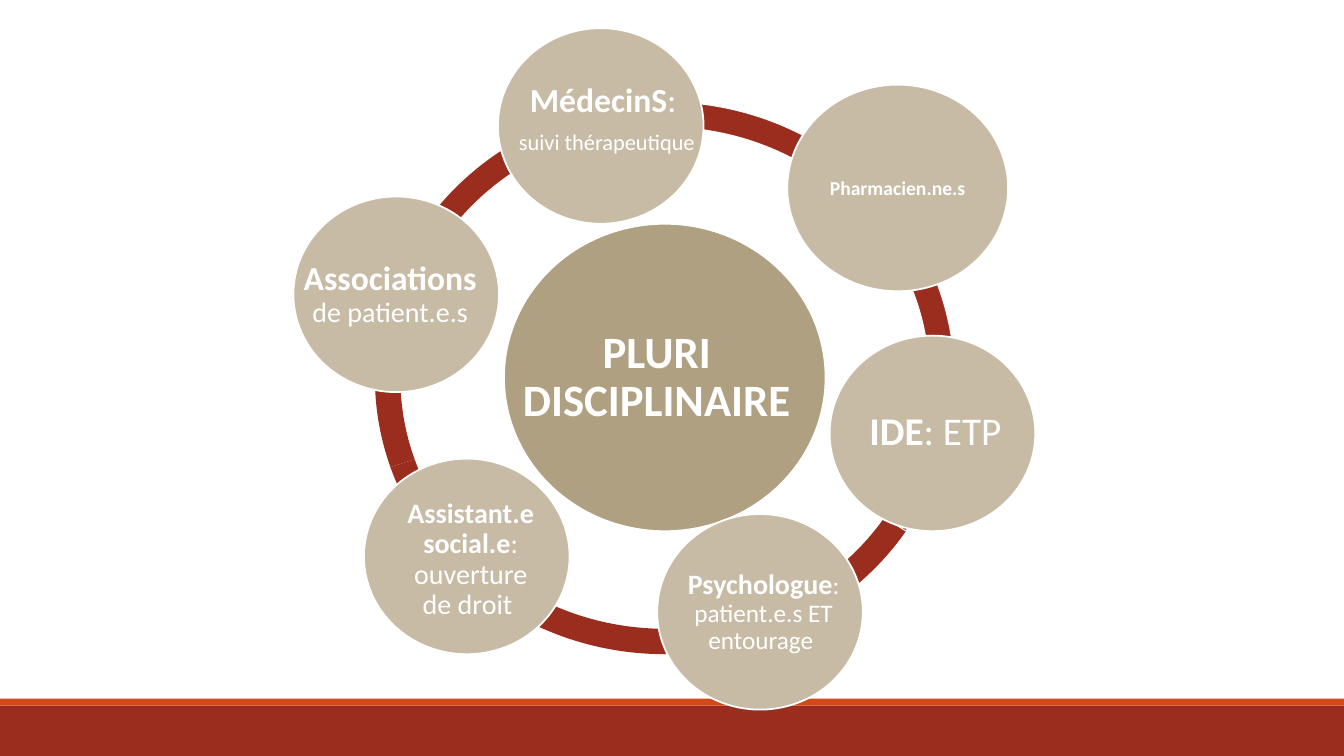
from lxml import etree
from pptx import Presentation, util as u
from pptx.dml.color import RGBColor
from pptx.enum import shapes, text

WIDTH, HEIGHT = u.Inches(13.333), u.Inches(7.5)
FONT, WHITE = "Calibri", "FFFFFF"
BRICK, ORANGE, TAN, SAND = "9B2D1F", "D34817", "B0A082", "C7BBA6"

# Boxes are (left, top, width, height) in percent of the slide
RING = (27.9, 13.47, 43.13, 73.07)
HUB = (37.5, 29.6, 23.93, 40.67)
HUB_LABEL = (37.5, 35.6, 22.73, 28.8)
PHARMACIST = (58.58, 11.2, 16.43, 27.33)
ROLE_SIZE = (15.3, 25.87)
LABEL_HEIGHT = 18.27

# Start and end angle of each ring segment, and its outline
SEGMENTS = [(118.8, 162, None), (75.6, 118.8, None), (32.4, 75.6, None),
            (205.2, 32.4, WHITE), (162, 205.2, None)]
BAND = 0.046

# Disc corner, label (left, top, width), paragraphs of (text, size, bold) runs
ROLES = [
    ((37.05, 3.73), (38.18, 6.67, 13.95),
     [[("MédecinS", 24, True), (": ", 24, False)],
      [("suivi thérapeutique", 16, False)]]),
    ((61.73, 44.4), (64.2, 48.13, 10.8),
     [[("IDE", 28, True), (": ETP", 28, False)]]),
    ((48.9, 68), (50.85, 71.87, 11.93),
     [[("Psychologue", 20, True), (": patient.e.s ET entourage ", 18, False)]]),
    ((27.08, 60.67), (29.63, 64.93, 10.8),
     [[("Assistant.e social.e", 20, True), (": ouverture de droit ", 20, False)]]),
    ((21.83, 26), (21.83, 29.87, 14.4),
     [[("Associations ", 24, True), ("de patient.e.s", 20, False)]]),
]


def color(hex_code):
    return RGBColor.from_string(hex_code)


def place(box):
    """Turn percentages of the slide into lengths."""
    return [u.Emu(round(share * side / 100))
            for share, side in zip(box, (WIDTH, HEIGHT, WIDTH, HEIGHT))]


def add_form(s, kind, box, fill, line=None, weight=1.25):
    sp = s.shapes.add_shape(kind, *place(box))
    sp.shadow.inherit = False
    sp.fill.solid()
    sp.fill.fore_color.rgb = color(fill)
    if line:
        sp.line.color.rgb = color(line)
        sp.line.width = u.Pt(weight)
    else:
        sp.line.fill.background()
    return sp


def add_segment(s, start, end, line):
    sp = add_form(s, shapes.MSO_SHAPE.BLOCK_ARC, RING, BRICK, line, 0.75)
    # Angles are stored in 60000ths of a degree, adjustments in 100000ths
    for i, value in enumerate((start * 0.6, end * 0.6, BAND)):
        sp.adjustments[i] = value


def add_disc(s, box, fill=SAND):
    return add_form(s, shapes.MSO_SHAPE.OVAL, box, fill, WHITE)


def write(tf, paragraphs, spacing=None, after=0):
    tf.word_wrap = True
    tf.vertical_anchor = text.MSO_ANCHOR.MIDDLE
    for i, runs in enumerate(paragraphs):
        p = tf.paragraphs[0] if i == 0 else tf.add_paragraph()
        p.alignment = text.PP_ALIGN.CENTER
        p.line_spacing = spacing
        p.space_after = u.Pt(round(runs[0][1] * after))
        for content, size, bold in runs:
            r = p.add_run()
            r.text = content
            r.font.name, r.font.size, r.font.bold = FONT, u.Pt(size), bold
            r.font.color.rgb = color(WHITE)


def add_label(s, box, paragraphs, inset=0.02):
    tf = s.shapes.add_textbox(*place(box)).text_frame
    tf.margin_left = tf.margin_right = u.Inches(inset)
    tf.margin_top = tf.margin_bottom = u.Inches(inset)
    write(tf, paragraphs, spacing=0.9, after=0.35)


def main():
    prs = Presentation()
    prs.slide_width, prs.slide_height = WIDTH, HEIGHT
    s = prs.slides.add_slide(prs.slide_layouts[6])

    # Footer bands
    add_form(s, shapes.MSO_SHAPE.RECTANGLE, (0, 93.33, 100, 6.67), BRICK)
    add_form(s, shapes.MSO_SHAPE.RECTANGLE, (0, 92.4, 100, 0.93), ORANGE)

    # Ring
    for segment in SEGMENTS:
        add_segment(s, *segment)

    # Hub
    add_disc(s, HUB, TAN)
    add_label(s, HUB_LABEL, [[("PLURI DISCIPLINAIRE", 32, True)]], inset=0.03)

    # Roles around the hub
    for corner, label, paragraphs in ROLES:
        add_disc(s, corner + ROLE_SIZE)
        add_label(s, label + (LABEL_HEIGHT,), paragraphs)
    pharmacist = add_disc(s, PHARMACIST)
    write(pharmacist.text_frame, [[("Pharmacien.ne.s", 14, True)]])

    prs.save("out.pptx")


if __name__ == "__main__":
    main()
